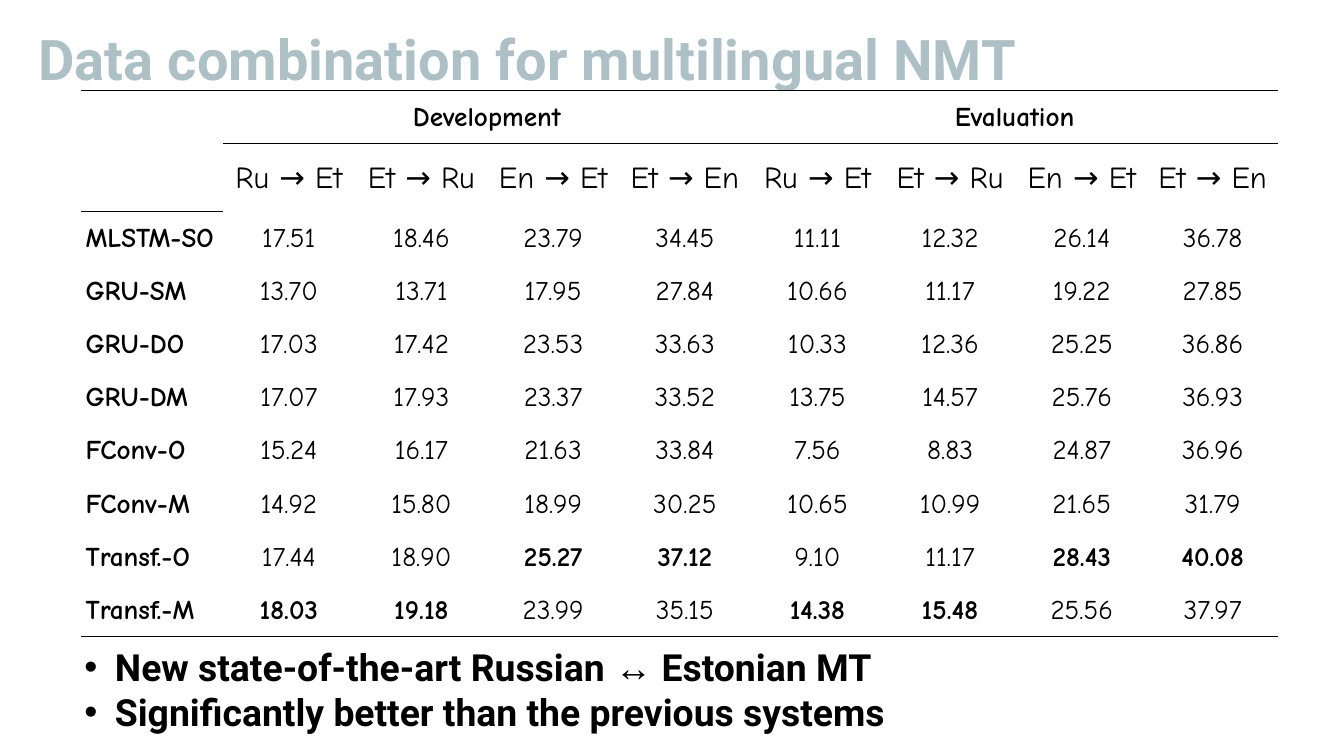
import pptx
import pptx.util
import pptx.dml.color
import pptx.enum.text
import pptx.oxml
import pptx.oxml.ns

Pt = pptx.util.Pt
RGB = pptx.dml.color.RGBColor
ALIGN = pptx.enum.text.PP_ALIGN
ANCHOR = pptx.enum.text.MSO_ANCHOR
NS = pptx.oxml.ns.nsdecls("a")

BLACK = RGB(0x00, 0x00, 0x00)
WHITE = RGB(0xFF, 0xFF, 0xFF)
MIST = RGB(0xAC, 0xC0, 0xC6)
PLAIN = "{2D5ABB26-0587-4C30-8999-92F81FD0307C}"

LEFT, WIDE = 95.8, 1411.2
COLS = [166.4] + [156.2, 156.2, 154.2, 156.2] + [156.2, 156.2, 154.2, 154.2]
ROW, TALL = 62.64, 79.2
PAIRS = ["Ru → Et", "Et → Ru", "En → Et", "Et → En"]
SCORES = {
    "MLSTM-SO": "17.51 18.46 23.79 34.45 11.11 12.32 26.14 36.78",
    "GRU-SM": "13.70 13.71 17.95 27.84 10.66 11.17 19.22 27.85",
    "GRU-DO": "17.03 17.42 23.53 33.63 10.33 12.36 25.25 36.86",
    "GRU-DM": "17.07 17.93 23.37 33.52 13.75 14.57 25.76 36.93",
    "FConv-O": "15.24 16.17 21.63 33.84 7.56 8.83 24.87 36.96",
    "FConv-M": "14.92 15.80 18.99 30.25 10.65 10.99 21.65 31.79",
    "Transf.-O": "17.44 18.90 25.27 37.12 9.10 11.17 28.43 40.08",
    "Transf.-M": "18.03 19.18 23.99 35.15 14.38 15.48 25.56 37.97",
}
POINTS = [
    ["New state-of-the-art Russian ", "↔", " Estonian MT"],
    ["Significantly better than the previous systems"],
]


class Deck:
    def __init__(self, wide, high):
        self.show = pptx.Presentation()
        self.show.slide_width, self.show.slide_height = Pt(wide), Pt(high)
        self.slide = self.show.slides.add_slide(self.show.slide_layouts[5])
        self.text, self.data = "Roboto", "Comic Neue"

    def font(self, font, name, size, bold, color=BLACK):
        font.name, font.size, font.bold = name, Pt(size), bold
        font.color.rgb = color

    def frame(self, shape):
        frame = shape.text_frame
        frame.word_wrap = True
        frame.auto_size = pptx.enum.text.MSO_AUTO_SIZE.NONE
        frame.vertical_anchor = ANCHOR.TOP
        frame.margin_left = frame.margin_right = Pt(3.6)
        frame.margin_top = frame.margin_bottom = Pt(3.6)
        return frame

    def title(self, text, x, y, w, h):
        shape = self.slide.shapes.title
        shape.left, shape.top, shape.width, shape.height = map(Pt, (x, y, w, h))
        para = self.frame(shape).paragraphs[0]
        para.text = text
        para.alignment = ALIGN.LEFT
        para.line_spacing = 0.76
        self.font(para.font, self.text, 66, True, MIST)

    def grid(self, x, y, cols, rows):
        table = self.slide.shapes.add_table(
            len(rows), len(cols), Pt(x), Pt(y), Pt(sum(cols)), Pt(sum(rows))).table
        table.first_row = table.horz_banding = False
        table._tbl.tblPr.find(pptx.oxml.ns.qn("a:tableStyleId")).text = PLAIN
        for col, wide in zip(table.columns, cols):
            col.width = Pt(wide)
        for row, high in zip(table.rows, rows):
            row.height = Pt(high)
        return table

    def cell(self, cell, text, size=32, bold=False, align=ALIGN.CENTER):
        cell.vertical_anchor = ANCHOR.MIDDLE
        cell.margin_left = cell.margin_right = Pt(5)
        cell.margin_top = cell.margin_bottom = 0
        para = cell.text_frame.paragraphs[0]
        para.text = text
        para.alignment = align
        para.line_spacing = 1.07
        self.font(para.font, self.data, size, bold)

    def paint(self, cell, sides):
        """Rule the given sides (T before B), then fill the cell."""
        props = cell._tc.get_or_add_tcPr()
        for side in sides:
            props.append(pptx.oxml.parse_xml(
                f'<a:ln{side} {NS} w="12700"><a:solidFill>'
                f'<a:srgbClr val="{BLACK}"/></a:solidFill></a:ln{side}>'))
        cell.fill.solid()
        cell.fill.fore_color.rgb = WHITE

    def list(self, items, x, y, w, h):
        box = self.slide.shapes.add_textbox(Pt(x), Pt(y), Pt(w), Pt(h))
        box.fill.solid()
        box.fill.fore_color.rgb = WHITE
        frame = self.frame(box)
        frame.margin_top = Pt(5.5)
        for i, runs in enumerate(items):
            para = frame.add_paragraph() if i else frame.paragraphs[0]
            props = para._p.get_or_add_pPr()
            props.set("marL", str(Pt(36)))
            props.set("indent", str(Pt(-36)))
            props.append(pptx.oxml.parse_xml(f'<a:buFont {NS} typeface="Arial"/>'))
            props.append(pptx.oxml.parse_xml(f'<a:buChar {NS} char="•"/>'))
            para.line_spacing = Pt(53)
            self.font(para.font, self.text, 44, True)
            for text in runs:
                run = para.add_run()
                run.text = text
                arrow = text == "↔"
                if len(runs) > 1:
                    self.font(run.font, "Arial" if arrow else self.text, 44, not arrow)


def main():
    deck = Deck(1583.3, 890.6)
    deck.title("Data combination for multilingual NMT", 41.8, 43.2, 1499.8, 126)

    rows = [ROW, TALL] + [ROW] * len(SCORES)
    table = deck.grid(LEFT, 106.6, COLS, rows)
    last = len(rows) - 1
    for r in range(len(rows)):
        for c in range(len(COLS)):
            sides = "TB" if r == 0 else "B" if r == last or (r, c) == (1, 0) else ""
            deck.paint(table.cell(r, c), sides)

    table.cell(0, 0).merge(table.cell(1, 0))
    for c, name in ((1, "Development"), (5, "Evaluation")):
        table.cell(0, c).merge(table.cell(0, c + 3))
        deck.cell(table.cell(0, c), name, bold=True)
    for c, pair in enumerate(PAIRS * 2, 1):
        deck.cell(table.cell(1, c), pair, size=36)

    scores = [line.split() for line in SCORES.values()]
    best = [max(col, key=float) for col in zip(*scores)]
    for r, (model, line) in enumerate(zip(SCORES, scores), 2):
        deck.cell(table.cell(r, 0), model, bold=True, align=ALIGN.LEFT)
        for c, (score, top) in enumerate(zip(line, best), 1):
            deck.cell(table.cell(r, c), score, bold=score == top)

    deck.list(POINTS, LEFT, 753.1, WIDE, 124.6)
    deck.show.save("out.pptx")


if __name__ == "__main__":
    main()
